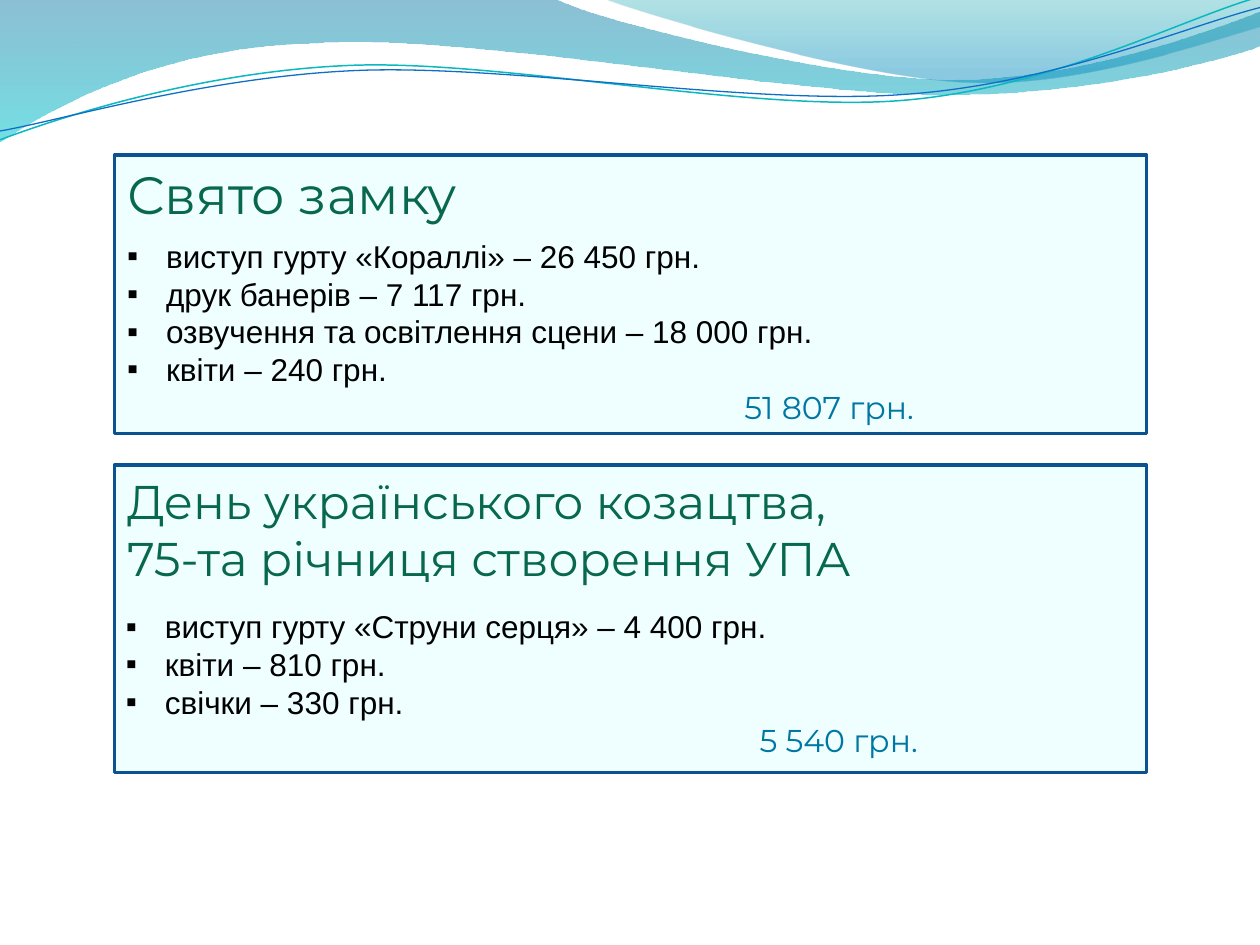
"""Build a budget slide: two expense cards under a wavy header."""
from dataclasses import dataclass
from typing import Optional

from lxml import etree
from pptx import Presentation
from pptx import util as u
from pptx.dml import color
from pptx.enum import shapes, text
from pptx.oxml import ns

COLORS = {"card": "EFFFFF", "border": "0B5292", "heading": "08684E", "item": "000000",
          "total": "0076A3", "teal": "0AB8BF", "blue": "0F6FC6", "sea": "0074A1",
          "aqua": "00C6CF", "lagoon": "00A1A9", "sky": "008BBF"}
COLUMNS, ROWS = 10, 7.5
CELL = u.Inches(1)
CARD_LEFT, CARD_WIDTH = 0.91, 8.19
HANGING = 0.31


@dataclass
class Stop:
    position: float
    name: str
    alpha: int


@dataclass
class Wave:
    start: tuple
    segments: list
    stops: Optional[list] = None
    line: Optional[tuple] = None


@dataclass
class Card:
    top: float
    height: float
    heading: list
    heading_size: int
    heading_width: float
    heading_height: float
    items_left: float
    items_top: float
    items: list
    total: str
    total_indent: float


BANDS = [
    Wave((0, 0), [(4.4, -0.01), (4.76, 0.17, 6.64, 0.63, 7.58, 0.63),
                  (8.53, 0.63, 9.58, 0.26, 10, 0.09), (10.01, 0.36),
                  (9.83, 0.44, 8.7, 0.76, 7.46, 0.75), (6.22, 0.75, 3.82, 0.28, 2.57, 0.34),
                  (1.29, 0.36, 0.46, 0.83, -0.01, 1.13), (0, 0)],
         stops=[Stop(0, "sea", 45), Stop(1, "aqua", 55)]),
    Wave((4.79, -0.01), [(5.09, 0.11, 6.82, 0.62, 7.69, 0.65),
                         (8.56, 0.69, 9.61, 0.32, 10, 0.21), (10, 0), (4.79, -0.01)],
         stops=[Stop(0, "lagoon", 30), Stop(0.8, "sky", 45)]),
]
STRANDS = [
    Wave((0, 1.11), [(0.48, 0.93, 1.58, 0.57, 2.77, 0.52), (3.95, 0.47, 5.93, 0.89, 7.13, 0.8),
                     (8.33, 0.71, 9.38, 0.15, 9.98, -0.02)], line=("teal", 0.85)),
    Wave((0, 1.04), [(0.47, 0.96, 1.64, 0.61, 2.83, 0.56), (4.03, 0.51, 5.97, 0.84, 7.17, 0.75),
                     (8.36, 0.67, 9.41, 0.21, 10, 0.06)], line=("blue", 0.75)),
]
CARDS = [
    Card(3.69, 2.44, ["День українського козацтва,", "75-та річниця створення УПА"],
         27, 8.08, 1.03, 0.9, 4.77,
         ["виступ гурту «Струни серця» – 4 400 грн.", "квіти – 810 грн.", "свічки – 330 грн."],
         "5 540 грн.", 5.03),
    Card(1.23, 2.21, ["Свято замку"], 30, 8.19, 0.61, 0.91, 1.83,
         ["виступ гурту «Кораллі» – 26 450 грн.", "друк банерів – 7 117 грн.",
          "озвучення та освітлення сцени – 18 000 грн.", "квіти – 240 грн."],
         "51 807 грн.", 4.9),
]


def grid(cells: float) -> int:
    return round(cells * CELL)


def rgb(name: str) -> color.RGBColor:
    return color.RGBColor.from_string(COLORS[name])


def bend(sp, segments: list) -> None:
    edges = iter(list(sp._element.iter(ns.qn("a:lnTo"))))
    for seg in segments:
        first = next(edges)
        if len(seg) == 6:
            curve = etree.Element(ns.qn("a:cubicBezTo"))
            first.addprevious(curve)
            for edge in (first, next(edges), next(edges)):
                curve.append(edge[0])
                edge.getparent().remove(edge)


def draw_wave(parent, wave: Wave) -> None:
    nodes = [(grid(seg[i]), grid(seg[i + 1]))
             for seg in wave.segments for i in range(0, len(seg), 2)]
    builder = parent.build_freeform(*map(grid, wave.start))
    builder.add_line_segments(nodes, close=wave.stops is not None)
    sp = builder.convert_to_shape()
    bend(sp, wave.segments)
    sp.shadow.inherit = False
    if wave.line:
        name, width = wave.line
        sp.fill.background()
        sp.line.color.rgb, sp.line.width = rgb(name), u.Pt(width)
        return
    sp.line.fill.background()
    sp.fill.gradient()
    sp.fill.gradient_angle = 270
    for target, stop in zip(sp.fill.gradient_stops, wave.stops):
        target.position = stop.position
        target.color.rgb = rgb(stop.name)
    for node, stop in zip(sp._element.spPr.iter(ns.qn("a:srgbClr")), wave.stops):
        etree.SubElement(node, ns.qn("a:alpha")).set("val", str(stop.alpha * 1000))


def add_text_frame(s, *box: float):
    tf = s.shapes.add_textbox(*map(grid, box)).text_frame
    tf.word_wrap, tf.auto_size = True, text.MSO_AUTO_SIZE.SHAPE_TO_FIT_TEXT
    return tf


def add_line(tf, words: str, size: int, font: str, name: str):
    p = tf.paragraphs[0] if not tf.paragraphs[0].runs else tf.add_paragraph()
    r = p.add_run()
    r.text = words
    r.font.size, r.font.name, r.font.color.rgb = u.Pt(size), font, rgb(name)
    return p


def indent(p, left: float, bullet: str = "") -> None:
    pPr = p._p.get_or_add_pPr()
    pPr.set("marL", str(grid(left)))
    pPr.set("indent", str(-grid(left) if bullet else 0))
    if bullet:
        etree.SubElement(pPr, ns.qn("a:buFont")).set("typeface", "Arial")
        etree.SubElement(pPr, ns.qn("a:buChar")).set("char", bullet)


def draw_panel(s, card: Card) -> None:
    box = map(grid, (CARD_LEFT, card.top, CARD_WIDTH, card.height))
    sp = s.shapes.add_shape(shapes.MSO_SHAPE.RECTANGLE, *box)
    sp.shadow.inherit = False
    sp.fill.solid()
    sp.fill.fore_color.rgb = rgb("card")
    sp.line.color.rgb, sp.line.width = rgb("border"), u.Pt(2)


def write_card(s, card: Card) -> None:
    tf = add_text_frame(s, CARD_LEFT, card.top + 0.01, card.heading_width, card.heading_height)
    for words in card.heading:
        add_line(tf, words, card.heading_size, "Montserrat", "heading")
    tf = add_text_frame(s, card.items_left, card.items_top, CARD_WIDTH, 1.62)
    for words in card.items:
        indent(add_line(tf, words, 18, "Arial", "item"), HANGING, "▪")
    indent(add_line(tf, card.total, 18, "Montserrat", "total"), card.total_indent)


def main() -> None:
    prs = Presentation()
    prs.slide_width, prs.slide_height = grid(COLUMNS), grid(ROWS)
    s = prs.slides.add_slide(prs.slide_layouts[6])
    for wave in BANDS:
        draw_wave(s.shapes, wave)
    strands = s.shapes.add_group_shape()
    for wave in STRANDS:
        draw_wave(strands.shapes, wave)
    for card in CARDS:
        draw_panel(s, card)
    for card in reversed(CARDS):
        write_card(s, card)
    prs.save("out.pptx")


if __name__ == "__main__":
    main()
